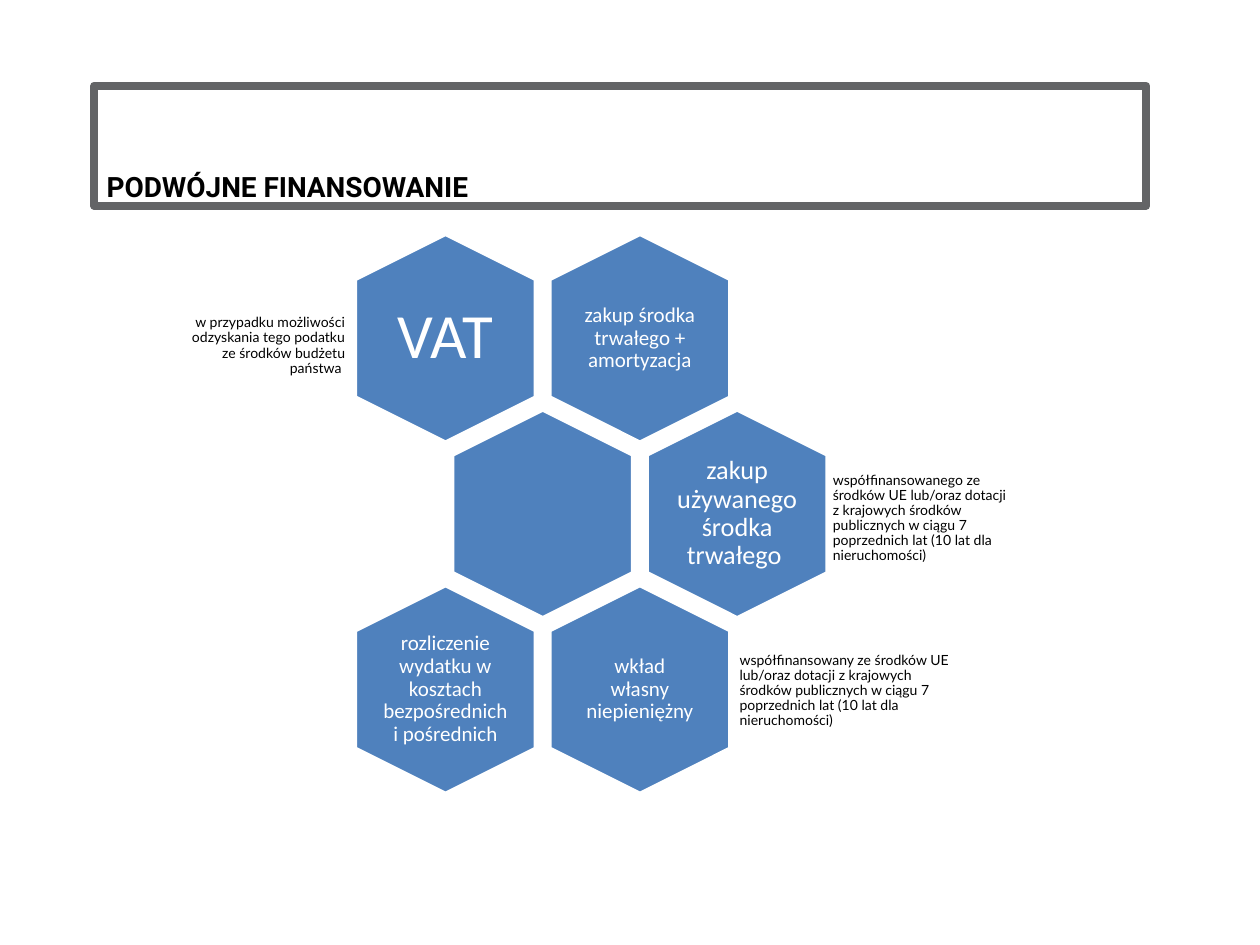
from pptx import Presentation
from pptx.dml.color import RGBColor
from pptx.enum.shapes import MSO_SHAPE
from pptx.enum.text import MSO_ANCHOR, PP_ALIGN
from pptx.util import Cm, Pt

COLORS = {"frame": "636466", "hexagon": "4F81BD", "white": "FFFFFF", "black": "000000"}

HEXAGON_LENGTH, HEXAGON_WIDTH = 4.19, 3.63
LABEL_WIDTH, LABEL_HEIGHT = 2.51, 2.87
COLUMN_PITCH, ROW_PITCH = 3.92, 3.54
NOTE_PITCH, NOTE_HEIGHT = 3.48, 2.51

CELLS = [
    (0, 0, "VAT", 36, 0),
    (0, 1, "zakup środka trwałego + amortyzacja", 12, 0.13),
    (1, 0.5, "", 12, 0),
    (1, 1.5, "zakup używanego środka trwałego ", 15, 0),
    (2, 0, "rozliczenie wydatku w kosztach bezpośrednich i pośrednich", 12, 0),
    (2, 1, "wkład własny niepieniężny", 12, 0.13),
]

NOTES = [
    (0, 3.33, PP_ALIGN.RIGHT,
     "w przypadku możliwości odzyskania tego podatku ze środków budżetu państwa "),
    (13, 3.71, PP_ALIGN.LEFT,
     "współfinansowanego ze środków UE lub/oraz dotacji z krajowych środków "
     "publicznych w ciągu 7 poprzednich lat (10 lat dla nieruchomości)"),
    (11.12, 4.67, PP_ALIGN.LEFT,
     "współfinansowany ze środków UE lub/oraz dotacji z krajowych środków "
     "publicznych w ciągu 7 poprzednich lat (10 lat dla nieruchomości)"),
]


def color(name):
    """Return the named colour."""
    return RGBColor.from_string(COLORS[name])


def write_text(shape, text, *, size, font_name, font_color="black", bold=False,
               align=PP_ALIGN.LEFT, anchor=MSO_ANCHOR.MIDDLE, spacing=0.9,
               margins=(0, 0, 0, 0)):
    """Write one formatted paragraph with margins given as left, top, right, bottom."""
    frame = shape.text_frame
    frame.word_wrap = True
    frame.vertical_anchor = anchor
    frame.margin_left, frame.margin_top, frame.margin_right, frame.margin_bottom = map(Cm, margins)
    paragraph = frame.paragraphs[0]
    paragraph.alignment = align
    paragraph.line_spacing = spacing
    run = paragraph.add_run()
    run.text = text
    run.font.size = Pt(size)
    run.font.name = font_name
    run.font.bold = bold
    run.font.color.rgb = color(font_color)


def add_title(slide, left, top, width, height):
    """Add the framed slide title."""
    shape = slide.shapes.add_shape(
        MSO_SHAPE.RECTANGLE, Cm(left), Cm(top), Cm(width), Cm(height))
    shape.shadow.inherit = False
    shape.fill.background()
    shape.line.color.rgb = color("frame")
    shape.line.width = Pt(4.5)
    write_text(shape, "PODWÓJNE FINANSOWANIE", size=16, font_name="Roboto", bold=True,
               anchor=MSO_ANCHOR.BOTTOM, spacing=1, margins=(0.25, 0.13, 0.25, 0.05))


def add_cell(slide, center_x, center_y, text, size, margin):
    """Add an upright hexagon with its label around a centre point."""
    shape = slide.shapes.add_shape(
        MSO_SHAPE.HEXAGON, Cm(center_x - HEXAGON_LENGTH / 2), Cm(center_y - HEXAGON_WIDTH / 2),
        Cm(HEXAGON_LENGTH), Cm(HEXAGON_WIDTH))
    shape.rotation = 90
    shape.adjustments[0] = 0.25
    shape.shadow.inherit = False
    shape.fill.solid()
    shape.fill.fore_color.rgb = color("hexagon")
    shape.line.color.rgb = color("white")
    shape.line.width = Pt(2)
    if text:
        label = slide.shapes.add_textbox(
            Cm(center_x - LABEL_WIDTH / 2), Cm(center_y - LABEL_HEIGHT / 2),
            Cm(LABEL_WIDTH), Cm(LABEL_HEIGHT))
        write_text(label, text, size=size, font_name="Calibri", font_color="white",
                   align=PP_ALIGN.CENTER, margins=(margin,) * 4)


def add_honeycomb(slide, left, top):
    """Add the hexagon grid and the notes beside its rows."""
    for row, column, text, size, margin in CELLS:
        add_cell(slide, left + 5.27 + column * COLUMN_PITCH, top + 2.1 + row * ROW_PITCH,
                 text, size, margin)
    for row, (offset, width, align, text) in enumerate(NOTES):
        note = slide.shapes.add_textbox(
            Cm(left + offset), Cm(top + 1 + row * NOTE_PITCH), Cm(width), Cm(NOTE_HEIGHT))
        write_text(note, text, size=8, font_name="Lato", align=align, margins=(0.08,) * 4)


def main():
    """Build and save the presentation."""
    presentation = Presentation()
    presentation.slide_width, presentation.slide_height = Cm(25.4), Cm(19.05)
    slide = presentation.slides.add_slide(presentation.slide_layouts[6])
    add_title(slide, 1.9, 1.73, 21.21, 2.42)
    add_honeycomb(slide, 3.71, 4.72)
    presentation.save("out.pptx")


if __name__ == "__main__":
    main()
